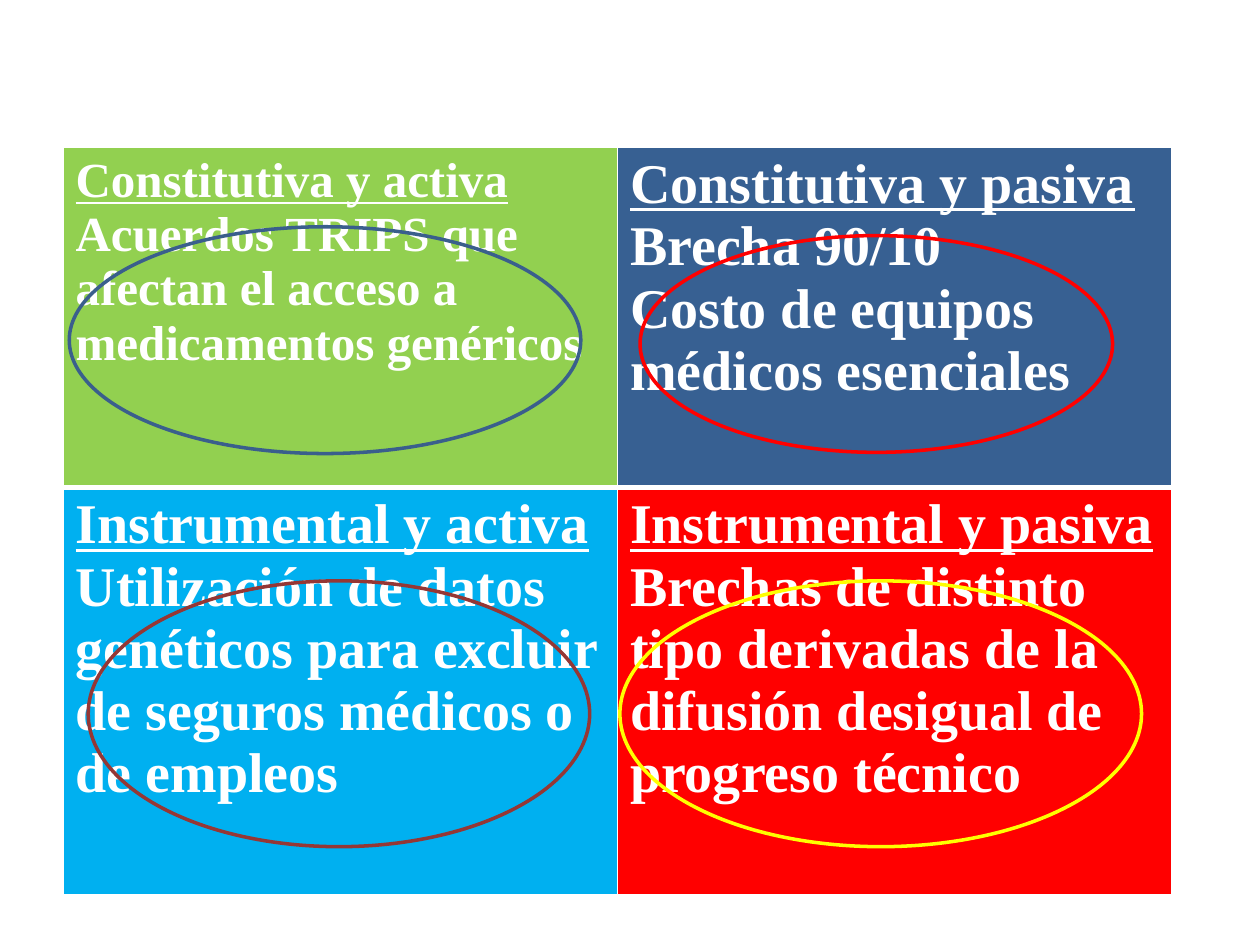
import pptx
import pptx.dml.color
import pptx.enum.shapes
import pptx.oxml
import pptx.oxml.ns
import pptx.util

Inches = pptx.util.Inches
Pt = pptx.util.Pt
RGBColor = pptx.dml.color.RGBColor

FONT = "Times New Roman"
WHITE = RGBColor(0xFF, 0xFF, 0xFF)
GREEN = RGBColor(0x92, 0xD0, 0x50)
NAVY = RGBColor(0x37, 0x60, 0x92)
SKY = RGBColor(0x00, 0xB0, 0xF0)
RED = RGBColor(0xFF, 0x00, 0x00)
STEEL = RGBColor(0x3A, 0x5F, 0x8C)
MAROON = RGBColor(0x95, 0x37, 0x35)
YELLOW = RGBColor(0xFF, 0xFF, 0x00)

COL_WIDTH = 4.4
ROW_HEIGHTS = (2.7, 3.23)

# Each cell: fill, text size, heading, body paragraphs
CELLS = (
    ((GREEN, 28, "Constitutiva y activa",
      ("Acuerdos TRIPS que afectan el acceso a medicamentos genéricos",)),
     (NAVY, 32, "Constitutiva y pasiva",
      ("Brecha 90/10", "Costo de equipos médicos esenciales"))),
    ((SKY, 32, "Instrumental y activa",
      ("Utilización de datos genéticos para excluir de seguros médicos o de empleos",)),
     (RED, 32, "Instrumental y pasiva",
      ("Brechas de distinto tipo derivadas de la difusión desigual de progreso técnico",))),
)

# Each ellipse: left, top, width, height, line colour
ELLIPSES = (
    (0.55, 1.8, 4.06, 1.8, STEEL),
    (5.08, 1.87, 3.75, 1.72, RED),
    (0.7, 4.61, 3.98, 2.11, MAROON),
    (4.92, 4.61, 4.14, 2.11, YELLOW),
)


def set_borders(cell, top, bottom):
    """White borders, 1 pt at the sides."""
    tc_pr = cell._tc.get_or_add_tcPr()
    for side, width in (("L", 1), ("R", 1), ("T", top), ("B", bottom)):
        tc_pr.append(pptx.oxml.parse_xml(
            f'<a:ln{side} {pptx.oxml.ns.nsdecls("a")} w="{Pt(width)}">'
            f'<a:solidFill><a:srgbClr val="{WHITE}"/></a:solidFill></a:ln{side}>'))


def fill_cell(cell, fill, size, heading, body):
    cell.fill.solid()
    cell.fill.fore_color.rgb = fill
    tf = cell.text_frame
    tf.text = "\n".join((heading, *body))
    for i, p in enumerate(tf.paragraphs):
        p.font.name = FONT
        p.font.size = Pt(size)
        p.font.bold = True
        p.font.underline = i == 0
        p.font.color.rgb = WHITE


def add_matrix(s):
    table = s.shapes.add_table(
        2, 2, Inches(0.5), Inches(1.17),
        Inches(2 * COL_WIDTH), Inches(sum(ROW_HEIGHTS))).table
    for col in table.columns:
        col.width = Inches(COL_WIDTH)
    for i, height in enumerate(ROW_HEIGHTS):
        table.rows[i].height = Inches(height)
        for j, content in enumerate(CELLS[i]):
            cell = table.cell(i, j)
            # The line between the two rows is thicker
            set_borders(cell, top=3 if i == 1 else 1, bottom=3 if i == 0 else 1)
            fill_cell(cell, *content)


def add_ellipse(s, left, top, width, height, color):
    sp = s.shapes.add_shape(
        pptx.enum.shapes.MSO_SHAPE.OVAL,
        Inches(left), Inches(top), Inches(width), Inches(height))
    sp.shadow.inherit = False
    sp.fill.background()
    sp.line.color.rgb = color
    sp.line.width = Pt(2)


def main():
    prs = pptx.Presentation()
    prs.slide_width, prs.slide_height = Inches(10), Inches(7.5)
    s = prs.slides.add_slide(prs.slide_layouts[6])

    # Two-by-two matrix
    add_matrix(s)

    # Outlines around the examples
    for ellipse in ELLIPSES:
        add_ellipse(s, *ellipse)

    prs.save("out.pptx")


if __name__ == "__main__":
    main()
